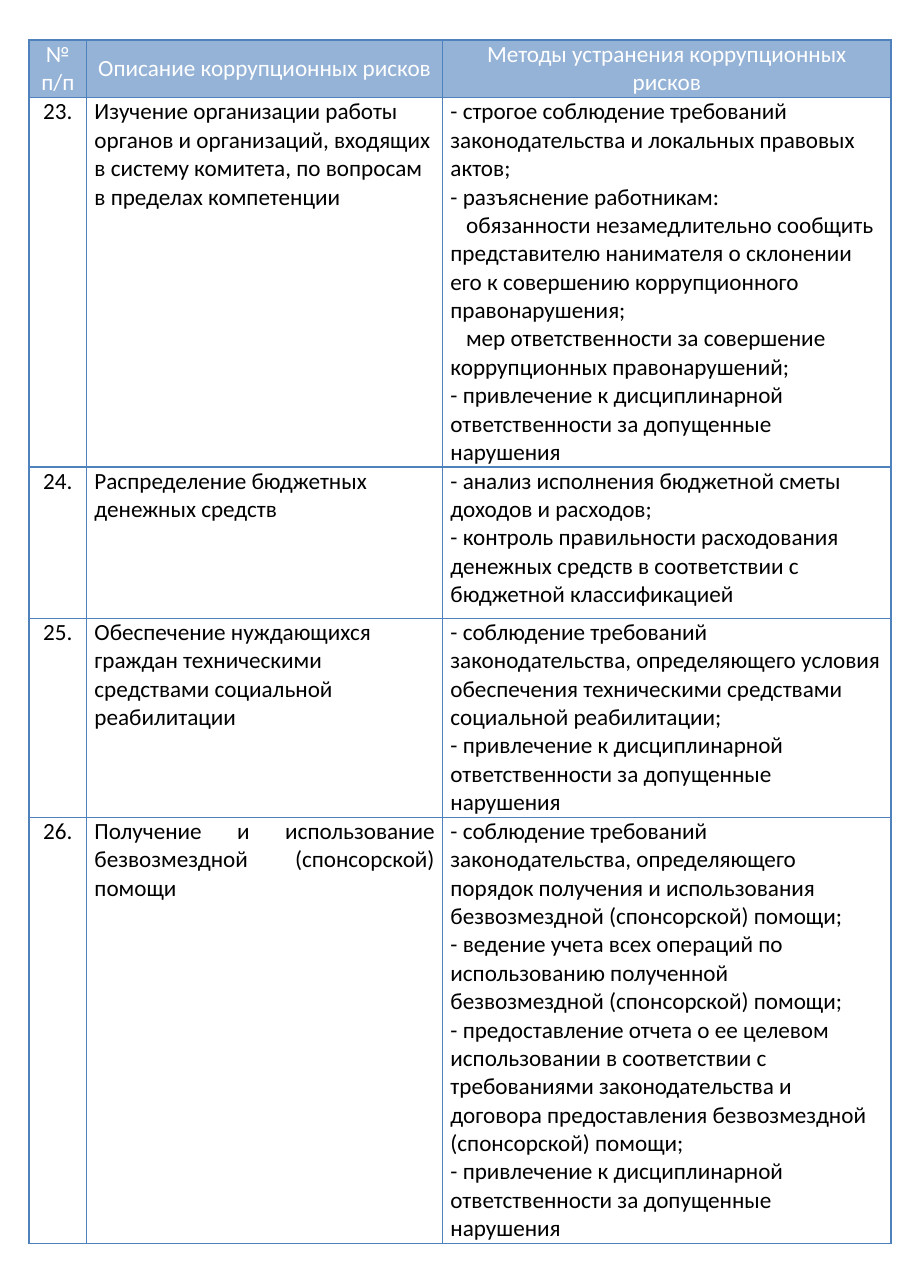
from dataclasses import dataclass

from lxml import etree
from pptx import Presentation
from pptx.dml.color import RGBColor
from pptx.enum.text import MSO_ANCHOR, PP_ALIGN
from pptx.oxml.ns import qn
from pptx.util import Inches, Pt

LEFT, CENTER, JUSTIFY = PP_ALIGN.LEFT, PP_ALIGN.CENTER, PP_ALIGN.JUSTIFY
TOP, MIDDLE = MSO_ANCHOR.TOP, MSO_ANCHOR.MIDDLE

DISCIPLINE = "- привлечение к дисциплинарной ответственности за допущенные нарушения"

HEADINGS = ("№ п/п", "Описание коррупционных рисков", "Методы устранения коррупционных рисков")
RISKS = [
    (
        "Изучение организации работы органов и организаций, входящих в систему комитета, "
        "по вопросам в пределах компетенции",
        [
            "- строгое соблюдение требований законодательства и локальных правовых актов;",
            "- разъяснение работникам:",
            "обязанности незамедлительно сообщить представителю нанимателя о склонении его "
            "к совершению коррупционного правонарушения;",
            "мер ответственности за совершение коррупционных правонарушений;",
            DISCIPLINE,
        ],
        LEFT,
    ),
    (
        "Распределение бюджетных денежных средств",
        [
            "- анализ исполнения бюджетной сметы доходов и расходов;",
            "- контроль правильности расходования денежных средств в соответствии "
            "с бюджетной классификацией",
        ],
        LEFT,
    ),
    (
        "Обеспечение нуждающихся граждан техническими средствами социальной реабилитации",
        [
            "- соблюдение требований законодательства, определяющего условия обеспечения "
            "техническими средствами социальной реабилитации;",
            DISCIPLINE,
        ],
        LEFT,
    ),
    (
        "Получение и использование безвозмездной (спонсорской) помощи",
        [
            "- соблюдение требований законодательства, определяющего порядок получения "
            "и использования безвозмездной (спонсорской) помощи;",
            "- ведение учета всех операций по использованию полученной безвозмездной "
            "(спонсорской) помощи;",
            "- предоставление отчета о ее целевом использовании в соответствии с требованиями "
            "законодательства и договора предоставления безвозмездной (спонсорской) помощи;",
            DISCIPLINE,
        ],
        JUSTIFY,
    ),
]
FIRST_NUMBER = 23

COLUMN_WIDTHS = (0.52, 3.2, 4.03)
ROW_HEIGHTS = (0.52, 3.32, 1.36, 1.79, 3.83)
TABLE_LEFT, TABLE_TOP = 0.26, 0.36
HEADING_MARGIN, TEXT_MARGIN = 0.09, 0.07
SUBITEM_INDENT = 0.14


@dataclass(frozen=True)
class Theme:
    font: str = "Calibri"
    size: int = 15
    text: str = "000000"
    heading_text: str = "FFFFFF"
    heading_fill: str = "95B3D7"
    border: str = "4F81BD"
    border_width: int = 1


THEME = Theme()


def draw_borders(cell):
    properties = cell._tc.get_or_add_tcPr()
    for side in ("a:lnL", "a:lnR", "a:lnT", "a:lnB"):
        border = etree.SubElement(properties, qn(side), w=str(Pt(THEME.border_width)))
        fill = etree.SubElement(border, qn("a:solidFill"))
        etree.SubElement(fill, qn("a:srgbClr"), val=THEME.border)


def fill_cell(cell, lines, align, margin, heading=False):
    draw_borders(cell)
    if heading:
        cell.fill.solid()
        cell.fill.fore_color.rgb = RGBColor.from_string(THEME.heading_fill)
    else:
        cell.fill.background()
    cell.margin_left = cell.margin_right = Inches(margin)
    cell.margin_top = cell.margin_bottom = 0
    cell.vertical_anchor = MIDDLE if heading else TOP
    cell.text_frame.text = "\n".join(lines)
    for paragraph in cell.text_frame.paragraphs:
        paragraph.alignment = align
        if len(lines) > 1 and not paragraph.text.startswith("-"):
            paragraph._p.get_or_add_pPr().set("indent", str(Inches(SUBITEM_INDENT)))
        for run in paragraph.runs:
            run.font.name = THEME.font
            run.font.size = Pt(THEME.size)
            run.font.bold = False
            color = THEME.heading_text if heading else THEME.text
            run.font.color.rgb = RGBColor.from_string(color)


def main():
    presentation = Presentation()
    presentation.slide_width, presentation.slide_height = Inches(8.27), Inches(11.58)
    slide = presentation.slides.add_slide(presentation.slide_layouts[6])

    risk_table = slide.shapes.add_table(
        len(ROW_HEIGHTS), len(COLUMN_WIDTHS), Inches(TABLE_LEFT), Inches(TABLE_TOP),
        Inches(sum(COLUMN_WIDTHS)), Inches(sum(ROW_HEIGHTS)),
    ).table
    risk_table.first_row = risk_table.horz_banding = False
    for column, width in zip(risk_table.columns, COLUMN_WIDTHS):
        column.width = Inches(width)
    for row, height in zip(risk_table.rows, ROW_HEIGHTS):
        row.height = Inches(height)

    for column, heading in enumerate(HEADINGS):
        fill_cell(risk_table.cell(0, column), [heading], CENTER, HEADING_MARGIN, heading=True)
    for row, (risk, methods, risk_align) in enumerate(RISKS, start=1):
        number = f"{FIRST_NUMBER + row - 1}."
        fill_cell(risk_table.cell(row, 0), [number], CENTER, HEADING_MARGIN)
        fill_cell(risk_table.cell(row, 1), [risk], risk_align, TEXT_MARGIN)
        fill_cell(risk_table.cell(row, 2), methods, LEFT, TEXT_MARGIN)

    presentation.save("out.pptx")


if __name__ == "__main__":
    main()
